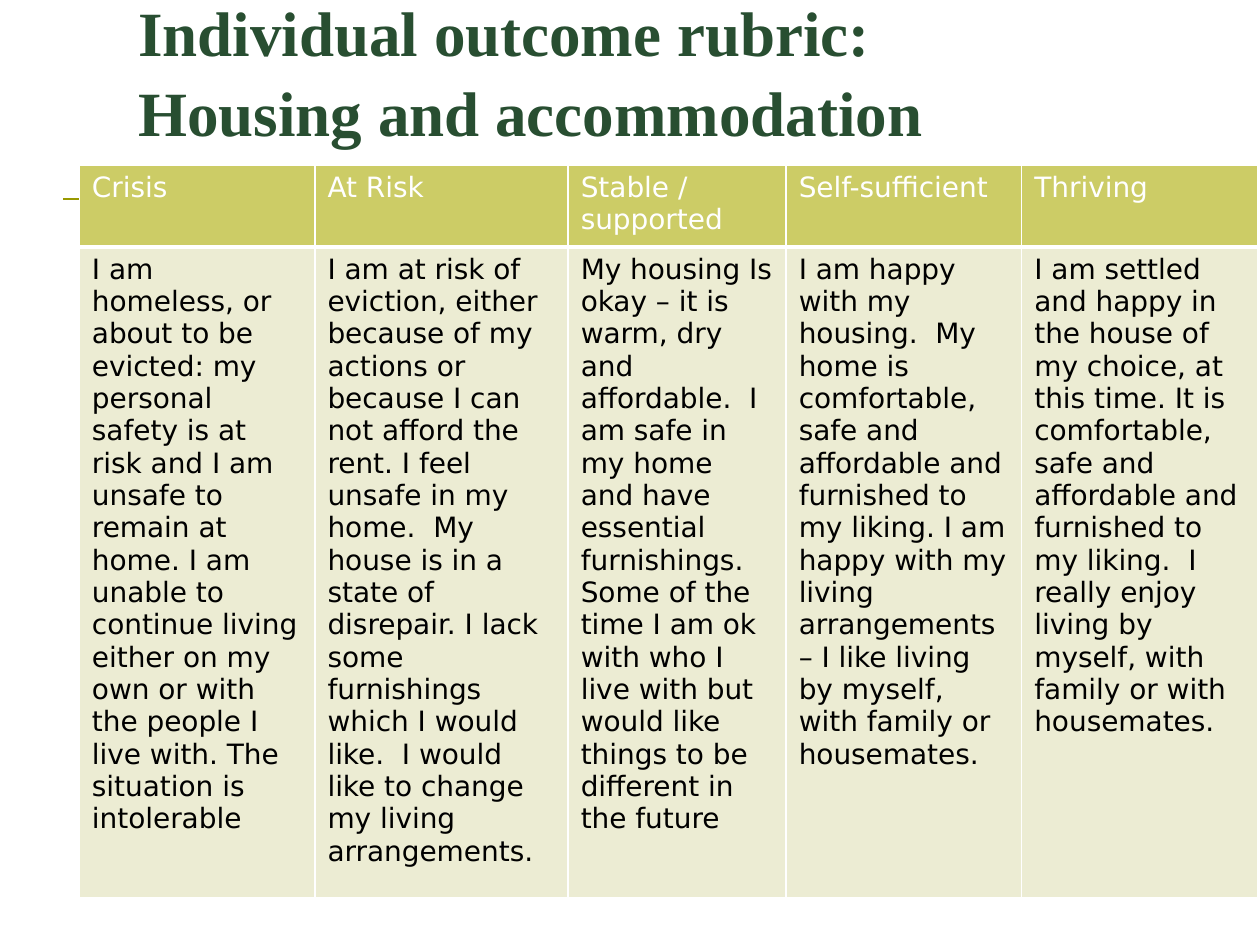
from dataclasses import dataclass

from lxml import etree
from pptx import Presentation
from pptx import util as u
from pptx.dml.color import RGBColor
from pptx.enum import shapes, text
from pptx.oxml.ns import qn


@dataclass(frozen=True)
class Theme:
    title_color: str = "284E31"
    rule: str = "999900"
    header_fill: str = "CCCC66"
    body_fill: str = "ECECD3"
    white: str = "FFFFFF"
    black: str = "000000"
    title_font: str = "Times New Roman"
    table_font: str = "DejaVu Sans"
    title_size: int = 36
    table_size: int = 16


RUBRIC = {
    "Crisis": "I am homeless, or about to be evicted: my personal safety is at risk and "
              "I am unsafe to remain at home. I am unable to continue living either on my "
              "own or with the people I live with. The situation is intolerable",
    "At Risk": "I am at risk of eviction, either because of my actions or because I can "
               "not afford the rent. I feel unsafe in my home.  My house is in a state of "
               "disrepair. I lack some furnishings which I would like.  I would like to "
               "change my living arrangements.",
    "Stable / supported": "My housing Is okay – it is warm, dry and affordable.  I am safe "
                          "in my home and have essential furnishings.  Some of the time I "
                          "am ok with who I live with but would like things to be "
                          "different in the future",
    "Self-sufficient": "I am happy with my housing.  My home is comfortable, safe and "
                       "affordable and furnished to my liking. I am happy with my living "
                       "arrangements – I like living by myself, with family or housemates.",
    "Thriving": "I am settled and happy in the house of my choice, at this time. It is "
                "comfortable, safe and affordable and furnished to my liking.  I really "
                "enjoy living by myself, with family or with housemates.",
}


class SlideBuilder:
    def __init__(self, slide, theme):
        self.s = slide
        self.theme = theme

    def set_font(self, p, name, size, color, bold=False):
        p.font.name = name
        p.font.size = u.Pt(size)
        p.font.bold = bold
        p.font.color.rgb = RGBColor.from_string(color)

    def line(self, x1, y1, x2, y2, color, width):
        sp = self.s.shapes.add_connector(
            shapes.MSO_CONNECTOR.STRAIGHT, *map(u.Inches, (x1, y1, x2, y2)))
        sp.line.color.rgb = RGBColor.from_string(color)
        sp.line.width = u.Pt(width)
        etree.SubElement(sp._element.spPr, qn("a:effectLst"))

    def title(self, words, x, y, w, h):
        sp = self.s.shapes.add_textbox(*map(u.Inches, (x, y, w, h)))
        tf = sp.text_frame
        tf.word_wrap = True
        tf.vertical_anchor = text.MSO_ANCHOR.BOTTOM
        p = tf.paragraphs[0]
        p.text = words
        p.line_spacing = 1.05
        t = self.theme
        self.set_font(p, t.title_font, t.title_size, t.title_color, bold=True)

    def borders(self, cell, bottom):
        tc_pr = cell._tc.get_or_add_tcPr()
        widths = {"lnL": 1, "lnR": 1, "lnT": 1, "lnB": bottom}
        for i, (side, width) in enumerate(widths.items()):
            ln = etree.Element(qn(f"a:{side}"), w=str(u.Pt(width)))
            fill = etree.SubElement(ln, qn("a:solidFill"))
            etree.SubElement(fill, qn("a:srgbClr"), val=self.theme.white)
            tc_pr.insert(i, ln)

    def cell(self, cell, words, fill, color, bottom):
        cell.fill.solid()
        cell.fill.fore_color.rgb = RGBColor.from_string(fill)
        p = cell.text_frame.paragraphs[0]
        p.text = words
        self.set_font(p, self.theme.table_font, self.theme.table_size, color)
        self.borders(cell, bottom)

    def table(self, rubric, x, y, col_widths, row_heights):
        t = self.theme
        frame = self.s.shapes.add_table(
            len(row_heights), len(col_widths), u.Inches(x), u.Inches(y),
            u.Inches(sum(col_widths)), u.Inches(sum(row_heights)))
        table = frame.table
        for col, width in zip(table.columns, col_widths):
            col.width = u.Inches(width)
        for row, height in zip(table.rows, row_heights):
            row.height = u.Inches(height)
        for i, (level, description) in enumerate(rubric.items()):
            self.cell(table.cell(0, i), level, t.header_fill, t.white, bottom=3)
            self.cell(table.cell(1, i), description, t.body_fill, t.black, bottom=1)


def main():
    prs = Presentation()
    prs.slide_width, prs.slide_height = u.Inches(10), u.Inches(7.5)
    theme = Theme()
    builder = SlideBuilder(prs.slides.add_slide(prs.slide_layouts[6]), theme)

    # Rule behind the table
    builder.line(0.5, 1.58, 9.33, 1.58, theme.rule, 1.5)

    # Heading
    builder.title("Individual outcome rubric: \vHousing and accommodation",
                  1, 0.68, 9, 0.55)

    # Rubric: one column per level
    builder.table(RUBRIC, 0.63, 1.31, [1.87, 2.01, 1.73, 1.87, 1.87], [0.65, 4.94])

    prs.save("out.pptx")


if __name__ == "__main__":
    main()
